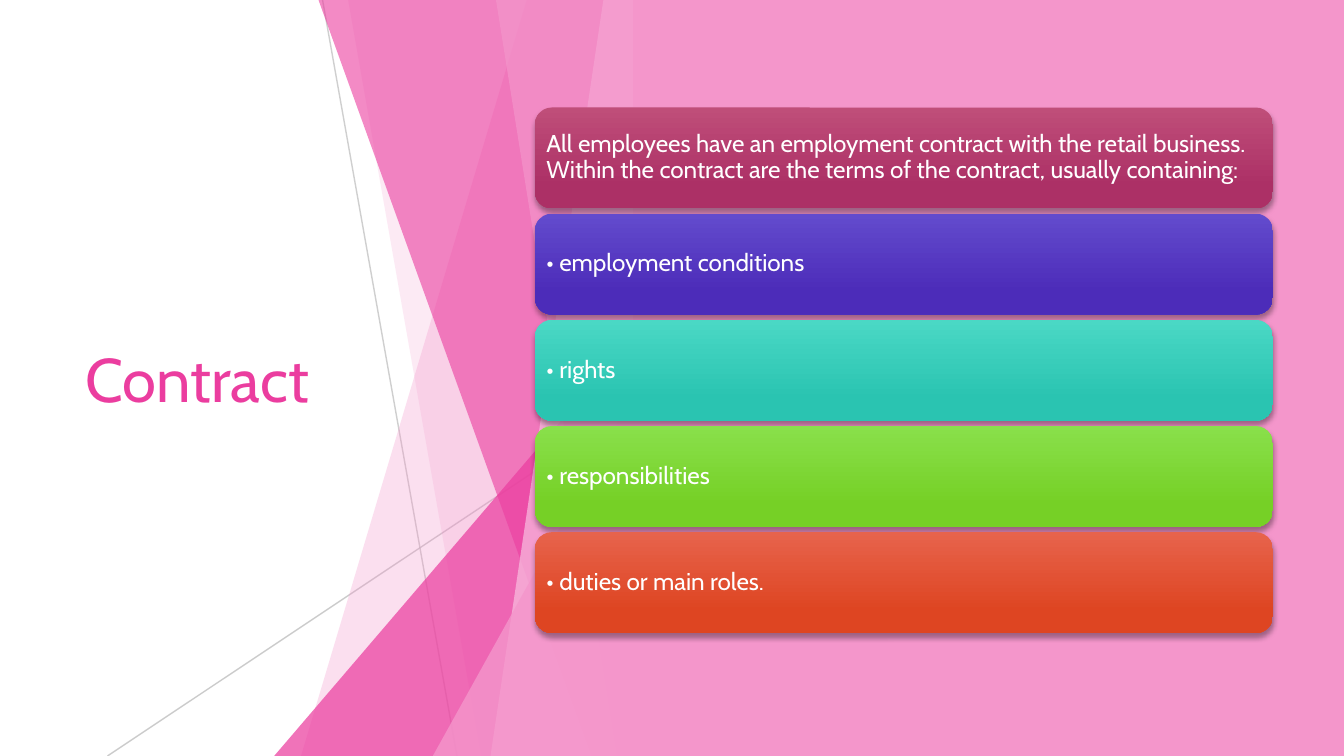
from pptx import Presentation
from pptx.dml.color import RGBColor
from pptx.enum.shapes import MSO_CONNECTOR as Connector, MSO_SHAPE as Shape
from pptx.enum.text import MSO_ANCHOR as Anchor, PP_ALIGN as Align
from pptx.oxml.ns import qn
from pptx.util import Inches, Pt
from lxml.etree import SubElement

COLORS = {
    "white": "FFFFFF",
    "black": "000000",
    "gray": "BFBFBF",
    "pink": "F496CB",
    "magenta": "EB3D9F",
    "pale": "F8C0E0",
}
FONT = "Cabin"
WIDTH, HEIGHT = 10, 5.625
CARDS = [
    ("All employees have an employment contract with the retail business. "
     "Within the contract are the terms of the contract, usually containing:", "BF4E79", "AC3066"),
    ("• employment conditions", "634BCD", "4C2CB9"),
    ("• rights", "4AD8C5", "2AC4B1"),
    ("• responsibilities", "89E04B", "76D026"),
    ("• duties or main roles.", "E7634C", "DE4522"),
]


def rgb(value):
    return RGBColor.from_string(value)


def set_alpha(color_parent, percent):
    color = next(color_parent.iter(qn("a:srgbClr")))
    SubElement(color, qn("a:alpha"), val=str(percent * 1000))


def fill_plain(shape, color, alpha=None):
    shape.shadow.inherit = False
    shape.fill.solid()
    shape.fill.fore_color.rgb = rgb(COLORS[color])
    shape.line.fill.background()
    if alpha is not None:
        set_alpha(shape._element.spPr, alpha)


def write_text(shape, text, size, color="white", inset=0.1, spacing=None):
    frame = shape.text_frame
    frame.word_wrap = True
    frame.vertical_anchor = Anchor.MIDDLE
    frame.margin_left = frame.margin_right = Inches(inset)
    frame.margin_top = frame.margin_bottom = Inches(0.05)
    paragraph = frame.paragraphs[0]
    paragraph.alignment = Align.LEFT
    paragraph.line_spacing = spacing
    run = paragraph.add_run()
    run.text = text
    run.font.name = FONT
    run.font.size = Pt(size)
    run.font.color.rgb = rgb(COLORS[color])


def add_ray(slide, start, end, alpha):
    ray = slide.shapes.add_connector(Connector.STRAIGHT, *map(Inches, start + end))
    ray.line.width = Pt(0.75)
    ray.line.color.rgb = rgb(COLORS["gray"])
    SubElement(ray._element.spPr, qn("a:effectLst"))
    set_alpha(ray._element.spPr, alpha)


def add_facet(slide, right, top_x, bottom_x, color, alpha):
    builder = slide.shapes.build_freeform(Inches(top_x), 0, scale=1.0)
    corners = [(right, 0), (right, HEIGHT), (bottom_x, HEIGHT)]
    builder.add_line_segments([(Inches(x), Inches(y)) for x, y in corners], close=True)
    fill_plain(builder.convert_to_shape(), color, alpha)


def add_wedge(slide, right, width, height, color, alpha):
    wedge = slide.shapes.add_shape(
        Shape.ISOSCELES_TRIANGLE, Inches(right - width), Inches(HEIGHT - height),
        Inches(width), Inches(height))
    wedge.adjustments[0] = 1
    fill_plain(wedge, color, alpha)


def add_facets(slide, left, right):
    add_ray(slide, (left + 0.36, 0), (left + 1.36, HEIGHT), 75)
    add_ray(slide, (right, 3.02), (left - 1.24, HEIGHT), 80)
    add_facet(slide, right, left + 1.88, left + 0.2, "pink", 30)
    add_facet(slide, right, left + 0.55, left + 1.54, "pink", 20)
    add_wedge(slide, right, 2.67, 3.12, "magenta", 72)
    add_facet(slide, right, left + 0.33, left + 2.36, "magenta", 60)
    add_facet(slide, right, left + 2.45, left + 1.61, "pale", 70)
    add_facet(slide, right, left + 1.65, left + 2.55, "pink", 65)
    add_wedge(slide, right, 1.49, 2.68, "pink", 80)


def add_title(slide, left, top, width, height):
    title = slide.shapes.add_textbox(*map(Inches, (left, top, width, height)))
    write_text(title, "Contract", 33, color="magenta")


def add_panel(slide, left, top, width, height):
    panel = slide.shapes.add_shape(Shape.RECTANGLE, *map(Inches, (left, top, width, height)))
    fill_plain(panel, "pink")


def add_card_shadow(card):
    card.shadow.inherit = False
    effects = card._element.spPr.find(qn("a:effectLst"))
    shadow = SubElement(effects, qn("a:outerShdw"), blurRad=str(Pt(3)), dist=str(Pt(2)),
                        dir="5400000", algn="ctr", rotWithShape="0")
    SubElement(shadow, qn("a:srgbClr"), val=COLORS["black"])
    set_alpha(shadow, 35)


def add_cards(slide, left, top, width, height, gap=0.04):
    card_height = (height - gap * (len(CARDS) - 1)) / len(CARDS)
    for index, (text, light, dark) in enumerate(CARDS):
        card_top = top + index * (card_height + gap)
        card = slide.shapes.add_shape(
            Shape.ROUNDED_RECTANGLE, *map(Inches, (left, card_top, width, card_height)))
        card.fill.gradient()
        card.fill.gradient_angle = 270
        for stop, color, position in zip(card.fill.gradient_stops, (light, dark), (0, 0.78)):
            stop.color.rgb = rgb(color)
            stop.position = position
        card.line.fill.background()
        add_card_shadow(card)
        write_text(card, text, 13, inset=0.05, spacing=0.9)


def main():
    presentation = Presentation()
    presentation.slide_width = Inches(WIDTH)
    presentation.slide_height = Inches(HEIGHT)
    slide = presentation.slides.add_slide(presentation.slide_layouts[6])
    slide.background.fill.solid()
    slide.background.fill.fore_color.rgb = rgb(COLORS["white"])
    add_facets(slide, 2.04, 4.71)
    add_title(slide, 0.54, 1.13, 2.91, 3.36)
    add_panel(slide, 4.71, 0, WIDTH - 4.71, HEIGHT)
    add_cards(slide, 3.98, 0.8, 5.49, 3.91)
    presentation.save("out.pptx")


if __name__ == "__main__":
    main()
